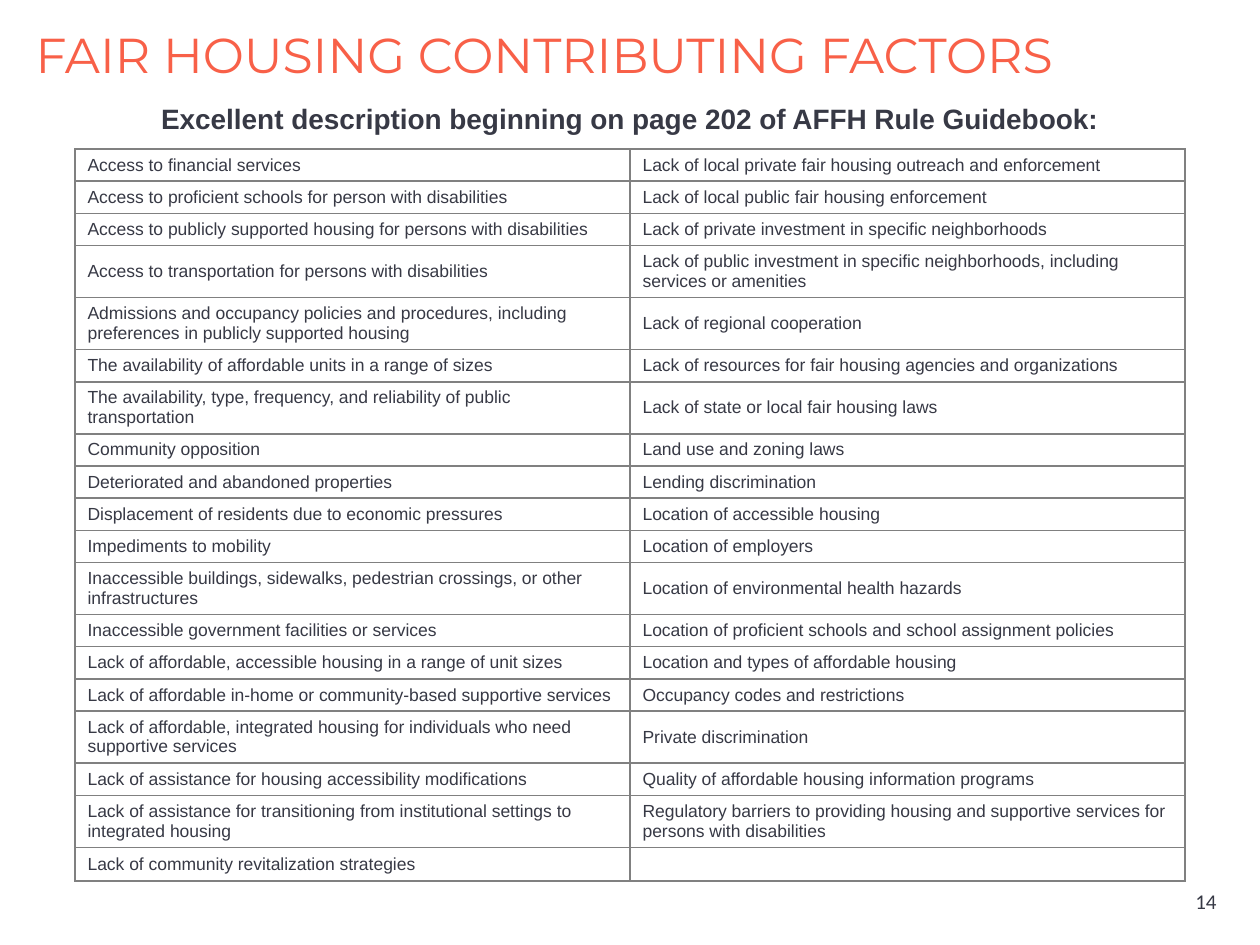
from lxml import etree
from pptx import Presentation
from pptx import util as u
from pptx.dml.color import RGBColor
from pptx.enum import text
from pptx.oxml import ns

SCALE = 914400 / 126
CORAL, INK, GREY = "F86048", "373945", "808080"
SHORT_ROW, TALL_ROW = 32, 52
TALL_ROWS = {3, 4, 6, 11, 15, 17}

FACTORS = [
    ("Access to financial services",
     "Lack of local private fair housing outreach and enforcement"),
    ("Access to proficient schools for person with disabilities",
     "Lack of local public fair housing enforcement"),
    ("Access to publicly supported housing for persons with disabilities",
     "Lack of private investment in specific neighborhoods"),
    ("Access to transportation for persons with disabilities",
     "Lack of public investment in specific neighborhoods, including services or amenities"),
    ("Admissions and occupancy policies and procedures, including preferences in publicly supported housing",
     "Lack of regional cooperation"),
    ("The availability of affordable units in a range of sizes",
     "Lack of resources for fair housing agencies and organizations"),
    ("The availability, type, frequency, and reliability of public transportation",
     "Lack of state or local fair housing laws"),
    ("Community opposition", "Land use and zoning laws"),
    ("Deteriorated and abandoned properties", "Lending discrimination"),
    ("Displacement of residents due to economic pressures", "Location of accessible housing"),
    ("Impediments to mobility", "Location of employers"),
    ("Inaccessible buildings, sidewalks, pedestrian crossings, or other infrastructures",
     "Location of environmental health hazards"),
    ("Inaccessible government facilities or services",
     "Location of proficient schools and school assignment policies"),
    ("Lack of affordable, accessible housing in a range of unit sizes",
     "Location and types of affordable housing"),
    ("Lack of affordable in-home or community-based supportive services",
     "Occupancy codes and restrictions"),
    ("Lack of affordable, integrated housing for individuals who need supportive services",
     "Private discrimination"),
    ("Lack of assistance for housing accessibility modifications",
     "Quality of affordable housing information programs"),
    ("Lack of assistance for transitioning from institutional settings to integrated housing",
     "Regulatory barriers to providing housing and supportive services for persons with disabilities"),
    ("Lack of community revitalization strategies", ""),
]


def px(length):
    return u.Emu(round(length * SCALE))


def color(hex_string):
    return RGBColor.from_string(hex_string)


def place(shape, box):
    shape.left, shape.top, shape.width, shape.height = map(px, box)


def add_run(paragraph, words, size, font, hex_string, bold=False):
    run = paragraph.add_run()
    run.text = words
    run.font.size = u.Pt(size)
    run.font.name = font
    run.font.bold = bold
    run.font.color.rgb = color(hex_string)


def set_frame(shape, anchor, alignment):
    """Set up the text frame and return its first paragraph."""
    frame = shape.text_frame
    frame.word_wrap = True
    frame.auto_size = text.MSO_AUTO_SIZE.NONE
    frame.vertical_anchor = anchor
    paragraph = frame.paragraphs[0]
    paragraph.alignment = alignment
    return paragraph


def fill_title(slide, box):
    title = slide.shapes.title
    place(title, box)
    paragraph = set_frame(title, text.MSO_ANCHOR.MIDDLE, text.PP_ALIGN.LEFT)
    paragraph.line_spacing = u.Pt(32)
    add_run(paragraph, "FAIR HOUSING CONTRIBUTING FACTORS", 28, "Montserrat", CORAL)


def fill_subtitle(slide, box):
    body = slide.placeholders[1]
    place(body, box)
    paragraph = set_frame(body, text.MSO_ANCHOR.TOP, text.PP_ALIGN.CENTER)
    paragraph.space_before = u.Pt(0)
    paragraph.space_after = u.Pt(6)
    properties = paragraph._p.get_or_add_pPr()
    properties.set("marL", "0")
    properties.set("indent", "0")
    etree.SubElement(properties, ns.qn("a:buNone"))
    add_run(paragraph, "Excellent description beginning on page 202 of AFFH Rule Guidebook:",
            16, "Arial", INK, bold=True)


def add_borders(cell, hex_string, points):
    properties = cell._tc.get_or_add_tcPr()
    for side in ("lnL", "lnR", "lnT", "lnB"):
        line = etree.SubElement(properties, ns.qn(f"a:{side}"), w=str(u.Pt(points)))
        fill = etree.SubElement(line, ns.qn("a:solidFill"))
        etree.SubElement(fill, ns.qn("a:srgbClr"), val=hex_string)


def fill_cell(cell, words):
    add_borders(cell, GREY, 1)
    cell.fill.background()
    cell.vertical_anchor = text.MSO_ANCHOR.MIDDLE
    paragraph = cell.text_frame.paragraphs[0]
    if words:
        add_run(paragraph, words, 10, "Arial", INK)
    else:
        etree.SubElement(paragraph._p, ns.qn("a:endParaRPr"), sz="1000")


def add_factor_table(slide, box):
    frame = slide.shapes.add_table(len(FACTORS), 2, *map(px, box))
    table = frame.table
    table.first_row = False
    table.horz_banding = False
    for column in table.columns:
        column.width = px(box[2] / 2)
    for index, factors in enumerate(FACTORS):
        table.rows[index].height = px(TALL_ROW if index in TALL_ROWS else SHORT_ROW)
        for cell, words in zip(table.rows[index].cells, factors):
            fill_cell(cell, words)


def add_page_number(slide, box):
    number = slide.shapes.add_textbox(*map(px, box))
    paragraph = set_frame(number, text.MSO_ANCHOR.MIDDLE, text.PP_ALIGN.RIGHT)
    add_run(paragraph, "14", 12, "Calibri", INK)


def main():
    presentation = Presentation()
    presentation.slide_width, presentation.slide_height = px(1260), px(945)
    slide = presentation.slides.add_slide(presentation.slide_layouts[1])
    fill_title(slide, (23, 21, 1174, 69))
    add_page_number(slide, (935, 876, 294, 50))
    fill_subtitle(slide, (113, 95, 1034, 73))
    add_factor_table(slide, (75, 149, 1110, 739))
    presentation.save("out.pptx")


if __name__ == "__main__":
    main()
